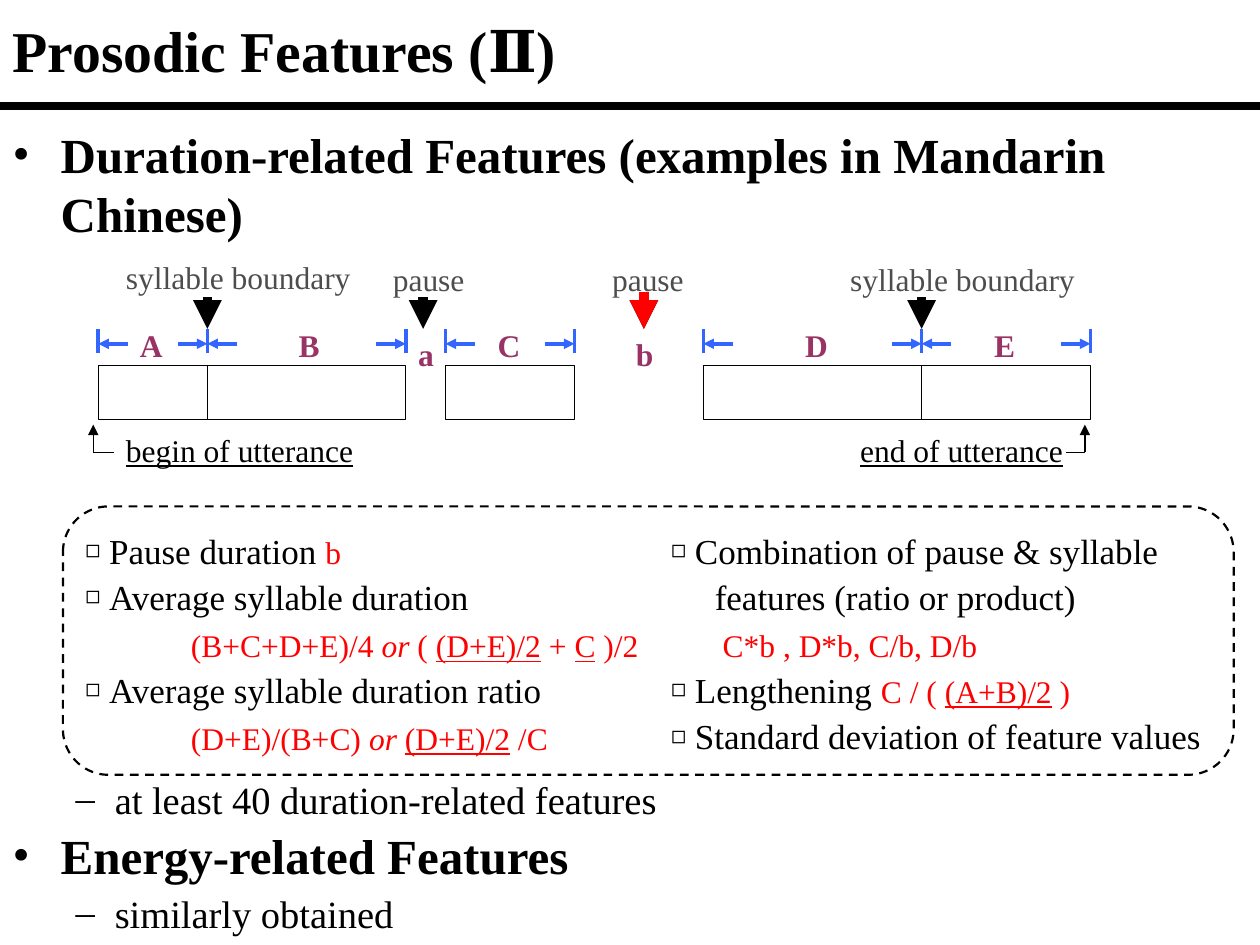
"""Build the slide on prosodic features: duration diagram and feature lists."""
from lxml import etree
from pptx import Presentation
from pptx.dml.color import RGBColor
from pptx.enum.dml import MSO_LINE
from pptx.enum.shapes import MSO_CONNECTOR, MSO_SHAPE
from pptx.enum.text import MSO_ANCHOR, MSO_AUTO_SIZE, PP_ALIGN
from pptx.oxml.ns import qn
from pptx.util import Cm, Pt

STRAIGHT, DASH = MSO_CONNECTOR.STRAIGHT, MSO_LINE.DASH
RECT, ROUND = MSO_SHAPE.RECTANGLE, MSO_SHAPE.ROUNDED_RECTANGLE
TOP, MIDDLE, LEFT, NO_FIT = MSO_ANCHOR.TOP, MSO_ANCHOR.MIDDLE, PP_ALIGN.LEFT, MSO_AUTO_SIZE.NONE
BLACK, WHITE, RED = RGBColor(0, 0, 0), RGBColor(255, 255, 255), RGBColor(255, 0, 0)
GRAY, BLUE, PLUM = RGBColor(0x4D, 0x4D, 0x4D), RGBColor(0x33, 0x66, 0xFF), RGBColor(0x99, 0x33, 0x66)
FONT = "Times New Roman"

HEAD = {"size": Pt(28), "bold": True}
SUB = {"size": Pt(22), "bold": False}
ITEM = {"size": Pt(20)}
FORMULA = {"size": Pt(18), "color": RED}
ITALIC = {**FORMULA, "italic": True}
UNDER = {**FORMULA, "underline": True}
CAPTION = {"size": Pt(18), "color": GRAY}
EDGE = {"size": Pt(18), "underline": True}
LABEL = {"size": Pt(18), "bold": True, "color": PLUM}

TITLE = "Prosodic Features (Ⅱ)"
BODY = [
    ("Duration-related Features (examples in Mandarin Chinese)", HEAD, 0, "•", 0.97, 4),
    ("at least 40 duration-related features", SUB, 1, "–", 2.06, 305),
    ("Energy-related Features", HEAD, 0, "•", 0.97, 2),
    ("similarly obtained", SUB, 1, "–", 2.06, 3),
]
SEGMENTS = [
    ("A", 1.98, 4.18, 2.57),
    ("B", 4.18, 8.18, 5.77),
    ("C", 8.98, 11.58, 9.78),
    ("D", 14.18, 18.58, 15.98),
    ("E", 18.58, 21.98, 19.79),
]
TEXTS = [
    ("syllable boundary", 2.29, 5.08, 6.2, CAPTION),
    ("pause", 7.67, 5.11, 2.2, CAPTION),
    ("pause", 12.09, 5.11, 2.2, CAPTION),
    ("syllable boundary", 16.89, 5.11, 5.8, CAPTION),
    ("begin of utterance", 2.29, 8.56, 6.6, EDGE),
    ("end of utterance", 17.09, 8.56, 6.6, EDGE),
    ("a", 8.18, 6.63, 1.6, LABEL),
    ("b", 12.57, 6.63, 1.6, LABEL),
] + [(name, x, 6.45, 1.4, LABEL) for name, _, _, x in SEGMENTS]
MARKERS = [(4.18, 5.99, BLACK), (8.53, 5.99, BLACK), (12.98, 5.99, BLACK),
           (18.58, 5.99, BLACK), (12.98, 5.89, RED)]
CORNERS = [(1.88, 2.29), (21.87, 21.49)]
FEATURES = [
    (1.47, 12.6, [
        ("◻", 0.48, [("Pause duration ", ITEM), ("b", FORMULA)]),
        ("◻", 0.48, [("Average syllable duration", ITEM)]),
        (None, 2.13, [("(B+C+D+E)/4 ", FORMULA), ("or", ITALIC), (" ( ", FORMULA),
                      ("(D+E)/2", UNDER), (" + ", FORMULA), ("C", UNDER), (" )/2", FORMULA)]),
        ("◻", 0.48, [("Average syllable duration ratio", ITEM)]),
        (None, 2.13, [("(D+E)/(B+C) ", FORMULA), ("or ", ITALIC), ("(D+E)/2", UNDER),
                      (" /C", FORMULA)]),
    ]),
    (13.28, 12.1, [
        ("◻", 0.48, [("Combination of pause & syllable", ITEM)]),
        (None, 0.88, [("features (ratio or product)", ITEM)]),
        (None, 1.04, [("C*b , D*b, C/b, D/b", FORMULA)]),
        ("◻", 0.48, [("Lengthening ", ITEM), ("C / ( ", FORMULA), ("(A+B)/2", UNDER),
                     (" )", FORMULA)]),
        ("◻", 0.48, [("Standard deviation of feature values", ITEM)]),
    ]),
]


def add_run(p, text, fmt):
    r = p.add_run()
    r.text = text
    r.font.name = FONT
    r.font.color.rgb = fmt.get("color", BLACK)
    for name, value in fmt.items():
        if name != "color":
            setattr(r.font, name, value)


def set_bullet(p, char, margin, hang, percent=100):
    pPr = p._p.get_or_add_pPr()
    pPr.set("marL", str(Cm(margin)))
    pPr.set("indent", str(-Cm(hang)))
    if char:
        etree.SubElement(pPr, qn("a:buSzPct"), val=str(percent * 1000))
        etree.SubElement(pPr, qn("a:buFont"), typeface=FONT)
        etree.SubElement(pPr, qn("a:buChar"), char=char)
    else:
        etree.SubElement(pPr, qn("a:buNone"))


def place(sp, *box):
    for name, value in zip(("left", "top", "width", "height"), box):
        setattr(sp, name, Cm(value))


def paragraphs(tf, items):
    for i, item in enumerate(items):
        yield (tf.add_paragraph() if i else tf.paragraphs[0]), item


def add_text(s, x, y, w, h):
    tf = s.shapes.add_textbox(Cm(x), Cm(y), Cm(w), Cm(h)).text_frame
    tf.word_wrap = True
    return tf


def add_line(s, x1, y1, x2, y2, color, width, arrow=False):
    c = s.shapes.add_connector(STRAIGHT, Cm(x1), Cm(y1), Cm(x2), Cm(y2))
    c.line.color.rgb = color
    c.line.width = Pt(width)
    if arrow:
        etree.SubElement(c.line._get_or_add_ln(), qn("a:tailEnd"), type="triangle")
    etree.SubElement(c._element.spPr, qn("a:effectLst"))


def add_box(s, kind, x, y, w, h, width):
    sp = s.shapes.add_shape(kind, Cm(x), Cm(y), Cm(w), Cm(h))
    sp.shadow.inherit = False
    sp.line.color.rgb = BLACK
    sp.line.width = Pt(width)
    return sp


def add_outline(s):
    title, body = s.shapes.title, s.placeholders[1]
    place(title, 0, 0, 25.4, 2)
    place(body, 0, 2.51, 25.4, 16.5)
    for sp, anchor in ((title, MIDDLE), (body, TOP)):
        tf = sp.text_frame
        tf.auto_size, tf.vertical_anchor, tf.word_wrap = NO_FIT, anchor, True
    p = title.text_frame.paragraphs[0]
    p.alignment = LEFT
    add_run(p, TITLE, {"size": Pt(33), "bold": True})
    tf = body.text_frame
    tf.margin_top = tf.margin_bottom = 0
    for p, (text, fmt, level, char, margin, before) in paragraphs(tf, BODY):
        p.level, p.space_before = level, Pt(before)
        set_bullet(p, char, margin, 0.79 if level else 0.97)
        add_run(p, text, fmt)
    add_line(s, 0, 2.13, 25.4, 2.13, BLACK, 4.5)


def add_diagram(s):
    for _, x1, x2, _ in SEGMENTS:
        box = add_box(s, RECT, x1, 7.37, x2 - x1, 1.09, 0.75)
        box.fill.solid()
        box.fill.fore_color.rgb = WHITE
        for x, tail in ((x1, x1 + 0.6), (x2, x2 - 0.6)):
            add_line(s, tail, 6.93, x, 6.93, BLUE, 2, True)
    for x in sorted({x for segment in SEGMENTS for x in segment[1:3]}):
        add_line(s, x, 6.63, x, 7.11, BLUE, 2)
    for x, y, color in MARKERS:
        add_line(s, x, y, x, 6.63, color, 5.5, True)
    for x, stub in CORNERS:
        add_line(s, x, 9.12, x, 8.56, BLACK, 0.75, True)
        add_line(s, x, 9.12, stub, 9.12, BLACK, 0.75)
    for text, x, y, w, fmt in TEXTS:
        add_run(add_text(s, x, y, w, 1.02).paragraphs[0], text, fmt)


def add_features(s):
    panel = add_box(s, ROUND, 1.27, 10.21, 23.6, 5.41, 1.25)
    panel.adjustments[0] = 0.17
    panel.fill.background()
    panel.line.dash_style = DASH
    for x, w, items in FEATURES:
        tf = add_text(s, x, 10.46, w, 5)
        for p, (char, margin, runs) in paragraphs(tf, items):
            p.line_spacing = Pt(26.5)
            set_bullet(p, char, margin, margin if char else 0, 70)
            for text, fmt in runs:
                add_run(p, text, fmt)


def main():
    prs = Presentation()
    prs.slide_width, prs.slide_height = Cm(25.4), Cm(19.05)
    s = prs.slides.add_slide(prs.slide_layouts[1])
    add_outline(s)
    add_diagram(s)
    add_features(s)
    prs.save("out.pptx")


if __name__ == "__main__":
    main()
